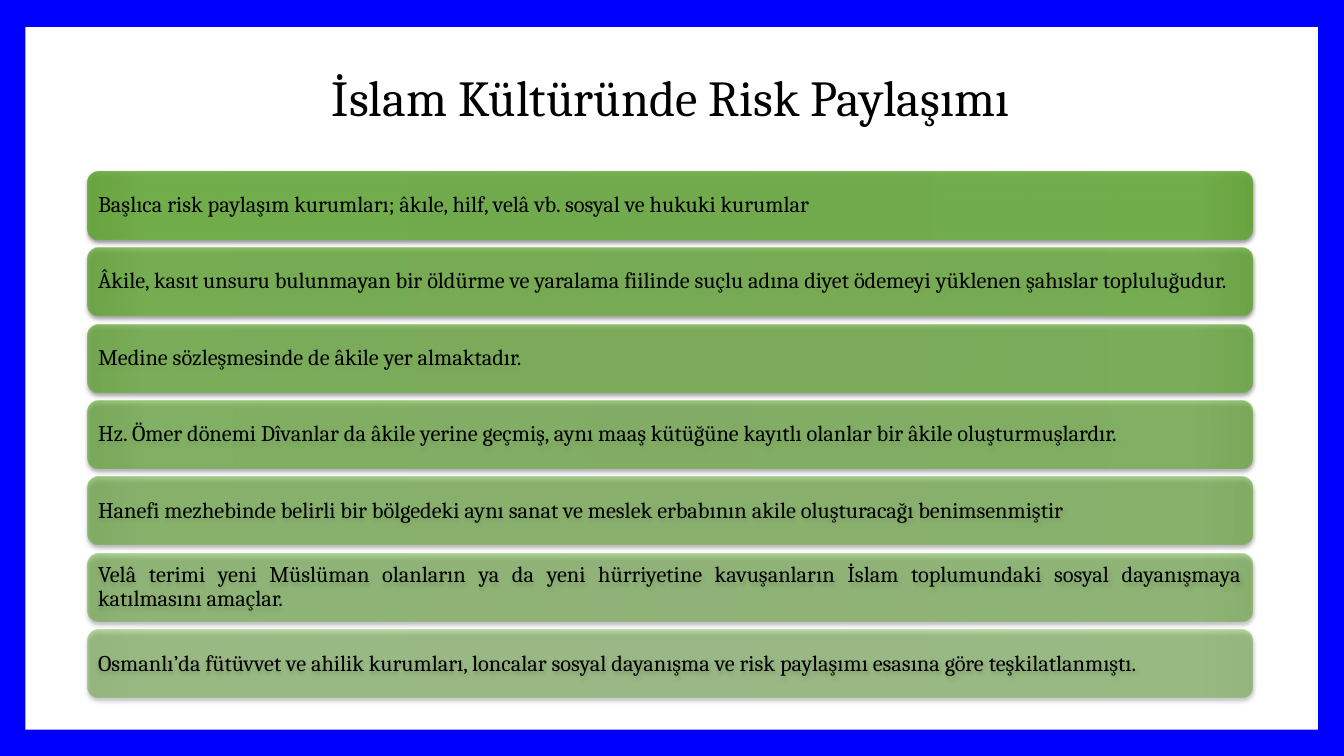
from pptx import Presentation
from pptx.dml.color import RGBColor
from pptx.enum.shapes import MSO_SHAPE
from pptx.enum.text import MSO_ANCHOR, PP_ALIGN
from pptx.oxml import parse_xml
from pptx.oxml.ns import nsdecls, qn
from pptx.util import Inches, Pt

BLUE = RGBColor(0x00, 0x00, 0xFF)
WHITE = RGBColor(0xFF, 0xFF, 0xFF)
BLACK = RGBColor(0x00, 0x00, 0x00)
GREEN = RGBColor(0x70, 0xAD, 0x47)
GREEN_MID = RGBColor(0x6F, 0xB0, 0x44)
GREEN_EDGE = RGBColor(0x64, 0xA6, 0x37)
STOPS = [(0, GREEN), (90, GREEN_MID), (100, GREEN_EDGE)]

TITLE = "İslam Kültüründe Risk Paylaşımı"
BARS = [
    "Başlıca risk paylaşım kurumları; âkıle, hilf, velâ vb. sosyal ve hukuki kurumlar",
    "Âkile, kasıt unsuru bulunmayan bir öldürme ve yaralama fiilinde suçlu adına diyet "
    "ödemeyi yüklenen şahıslar topluluğudur.",
    "Medine sözleşmesinde de âkile yer almaktadır.",
    "Hz. Ömer dönemi Dîvanlar da âkile yerine geçmiş, aynı maaş kütüğüne kayıtlı olanlar "
    "bir âkile oluşturmuşlardır.",
    "Hanefi mezhebinde belirli bir bölgedeki aynı sanat ve meslek erbabının akile "
    "oluşturacağı benimsenmiştir",
    "Velâ terimi yeni Müslüman olanların ya da yeni hürriyetine kavuşanların İslam "
    "toplumundaki sosyal dayanışmaya katılmasını amaçlar.",
    "Osmanlı’da fütüvvet ve ahilik kurumları, loncalar sosyal dayanışma ve risk paylaşımı "
    "esasına göre teşkilatlanmıştı.",
]


class SlideBuilder:
    font = "Cambria"
    color = BLACK

    def __init__(self, prs, layout):
        self.prs = prs
        self.s = prs.slides.add_slide(prs.slide_layouts[layout])

    def box(self, left, top, width, height):
        w, h = self.prs.slide_width, self.prs.slide_height
        return [round(share * side / 100)
                for share, side in zip((left, top, width, height), (w, h, w, h))]

    def background(self, color):
        fill = self.s.background.fill
        fill.solid()
        fill.fore_color.rgb = color

    def add_text(self, tf, text, size, align, anchor):
        tf.word_wrap = True
        tf.vertical_anchor = anchor
        p = tf.paragraphs[0]
        p.alignment = align
        p.line_spacing = 0.9
        r = p.add_run()
        r.text = text
        r.font.name = self.font
        r.font.size = Pt(size)
        r.font.color.rgb = self.color

    def title(self, text, *area):
        sp = self.s.shapes.title
        sp.left, sp.top, sp.width, sp.height = self.box(*area)
        self.add_text(sp.text_frame, text, 36, PP_ALIGN.CENTER, MSO_ANCHOR.TOP)

    def shape(self, kind, *area):
        sp = self.s.shapes.add_shape(kind, *self.box(*area))
        sp.shadow.inherit = False
        sp.line.fill.background()
        return sp

    def panel(self, color, *area):
        sp = self.shape(MSO_SHAPE.RECTANGLE, *area)
        sp.fill.solid()
        sp.fill.fore_color.rgb = color
        self.s.shapes.title.element.addprevious(sp.element)

    def bar(self, text, opacity, *area):
        sp = self.shape(MSO_SHAPE.ROUNDED_RECTANGLE, *area)
        self.glow_fill(sp, opacity)
        self.drop_shadow(sp)
        tf = sp.text_frame
        tf.margin_left = tf.margin_right = Inches(0.07)
        tf.margin_top = tf.margin_bottom = Inches(0.07)
        self.add_text(tf, text, 16, PP_ALIGN.JUSTIFY, MSO_ANCHOR.MIDDLE)

    def glow_fill(self, sp, opacity):
        sp.fill.background()
        stops = "".join(
            f'<a:gs pos="{pos * 1000}"><a:srgbClr val="{color}">'
            f'<a:alpha val="{round(opacity * 1000)}"/></a:srgbClr></a:gs>'
            for pos, color in STOPS)
        grad = parse_xml(
            f'<a:gradFill {nsdecls("a")} rotWithShape="1"><a:gsLst>{stops}</a:gsLst>'
            '<a:path path="circle"><a:fillToRect l="100000" t="100000" r="100000" '
            'b="100000"/></a:path></a:gradFill>')
        sppr = sp.element.spPr
        sppr.replace(sppr.find(qn("a:noFill")), grad)

    def drop_shadow(self, sp):
        sp.element.spPr.find(qn("a:effectLst")).append(parse_xml(
            f'<a:outerShdw {nsdecls("a")} blurRad="{Pt(3)}" dist="{Pt(2)}" '
            f'dir="5400000" rotWithShape="0"><a:srgbClr val="{BLACK}">'
            '<a:alpha val="45000"/></a:srgbClr></a:outerShdw>'))


def main():
    prs = Presentation()
    prs.slide_width = Inches(13.33)
    prs.slide_height = Inches(7.5)
    slide = SlideBuilder(prs, 5)
    slide.background(BLUE)
    slide.panel(WHITE, 1.88, 3.6, 96.17, 92.93)
    slide.title(TITLE, 9.38, 8.93, 81.02, 19.73)
    top, pitch = 22.67, 10.11
    fade = 40 / (len(BARS) - 1)
    for i, text in enumerate(BARS):
        slide.bar(text, 90 - i * fade, 6.53, top + i * pitch, 86.65, 8.97)
    prs.save("out.pptx")


if __name__ == "__main__":
    main()
